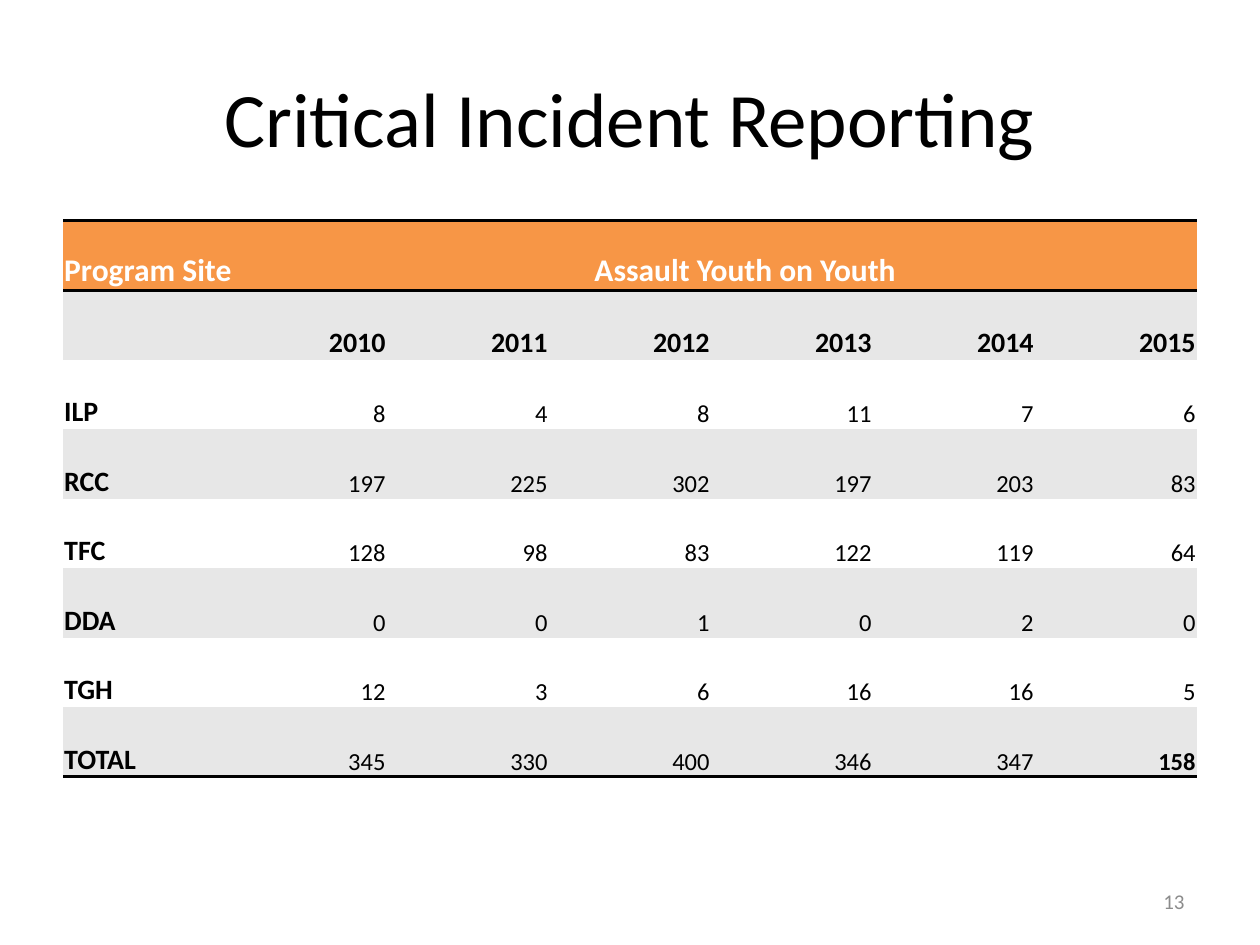
from lxml import etree
from pptx import Presentation
from pptx.dml.color import RGBColor
from pptx.enum.text import MSO_ANCHOR, PP_ALIGN
from pptx.oxml.ns import qn
from pptx.util import Inches, Pt

LEFT, CENTER, RIGHT = PP_ALIGN.LEFT, PP_ALIGN.CENTER, PP_ALIGN.RIGHT
MIDDLE, BOTTOM = MSO_ANCHOR.MIDDLE, MSO_ANCHOR.BOTTOM
WIDTH, HEIGHT = 10, 7.5
PLAIN_TABLE = "{2D5ABB26-0587-4C30-8999-92F81FD0307C}"

YEARS = ["", "2010", "2011", "2012", "2013", "2014", "2015"]
SITES = [
    ["ILP", 8, 4, 8, 11, 7, 6],
    ["RCC", 197, 225, 302, 197, 203, 83],
    ["TFC", 128, 98, 83, 122, 119, 64],
    ["DDA", 0, 0, 1, 0, 2, 0],
    ["TGH", 12, 3, 6, 16, 16, 5],
    ["TOTAL", 345, 330, 400, 346, 347, 158],
]


def color(value):
    return RGBColor.from_string(value)


def write(frame, text, size=14, ink="000000", bold=False, align=LEFT, font="Calibri"):
    para = frame.paragraphs[0]
    para.alignment = align
    span = para.add_run()
    span.text = text
    span.font.name = font
    span.font.size = Pt(size)
    span.font.bold = bold
    span.font.color.rgb = color(ink)


class ReportSlide:
    accent, band, paper, ink, muted = "F79646", "E7E7E7", "FFFFFF", "000000", "8C8C8C"
    rule_width = 2

    def __init__(self, deck):
        self.slide = deck.slides.add_slide(deck.slide_layouts[6])

    def label(self, text, left, top, width, height, **style):
        box = self.slide.shapes.add_textbox(
            Inches(left * WIDTH), Inches(top * HEIGHT),
            Inches(width * WIDTH), Inches(height * HEIGHT))
        box.text_frame.word_wrap = True
        box.text_frame.vertical_anchor = MIDDLE
        write(box.text_frame, text, **style)

    def rule(self, cell, side):
        properties = cell._tc.get_or_add_tcPr()
        line = etree.Element(qn(f"a:{side}"), w=str(Pt(self.rule_width)))
        fill = etree.SubElement(line, qn("a:solidFill"))
        etree.SubElement(fill, qn("a:srgbClr"), val=self.ink)
        properties.insert(0, line)

    def fill_cell(self, cell, text, fill, **style):
        cell.fill.solid()
        cell.fill.fore_color.rgb = color(fill)
        cell.vertical_anchor = BOTTOM
        cell.margin_left = cell.margin_right = cell.margin_top = Inches(0.01)
        cell.margin_bottom = 0
        if text:
            write(cell.text_frame, text, **style)

    def table(self, rows, left, top, widths, row_height):
        frame = self.slide.shapes.add_table(
            len(rows), len(widths), Inches(left * WIDTH), Inches(top * HEIGHT),
            Inches(sum(widths)), Inches(row_height * len(rows)))
        table = frame.table
        table.first_row = table.horz_banding = False
        table._tbl.tblPr.find(qn("a:tableStyleId")).text = PLAIN_TABLE
        for column, width in zip(table.columns, widths):
            column.width = Inches(width)
        for row in table.rows:
            row.height = Inches(row_height)
        table.cell(0, 1).merge(table.cell(0, len(widths) - 1))
        last_row, last_column = len(rows) - 1, len(widths) - 1
        for i, values in enumerate(rows):
            for j, value in enumerate(values):
                cell = table.cell(i, j)
                if i == 0:
                    self.fill_cell(cell, value, self.accent, size=18, ink=self.paper,
                                   bold=True, align=CENTER if j else LEFT)
                else:
                    heading = i == 1 or j == 0
                    total = (i, j) == (last_row, last_column)
                    self.fill_cell(cell, str(value), self.band if i % 2 else self.paper,
                                   size=16 if heading else 14, bold=heading or total,
                                   align=RIGHT if j else LEFT)
                if i in (0, last_row):
                    self.rule(cell, "lnB")
                if i == 0:
                    self.rule(cell, "lnT")


def main():
    deck = Presentation()
    deck.slide_width, deck.slide_height = Inches(WIDTH), Inches(HEIGHT)
    page = ReportSlide(deck)
    page.label("Critical Incident Reporting", 0.05, 0.04, 0.9, 1 / 6, size=44, align=CENTER)
    header = ["Program Site", "Assault Youth on Youth"] + [""] * 5
    page.table([header, YEARS] + SITES, 0.05, 1.75 / HEIGHT,
               [1.83, 0.74] + [1.286] * 5, 0.552)
    page.label("13", 0.717, 6.95 / HEIGHT, 0.233, 0.4 / HEIGHT,
               size=12, ink=page.muted, align=RIGHT)
    deck.save("out.pptx")


if __name__ == "__main__":
    main()
